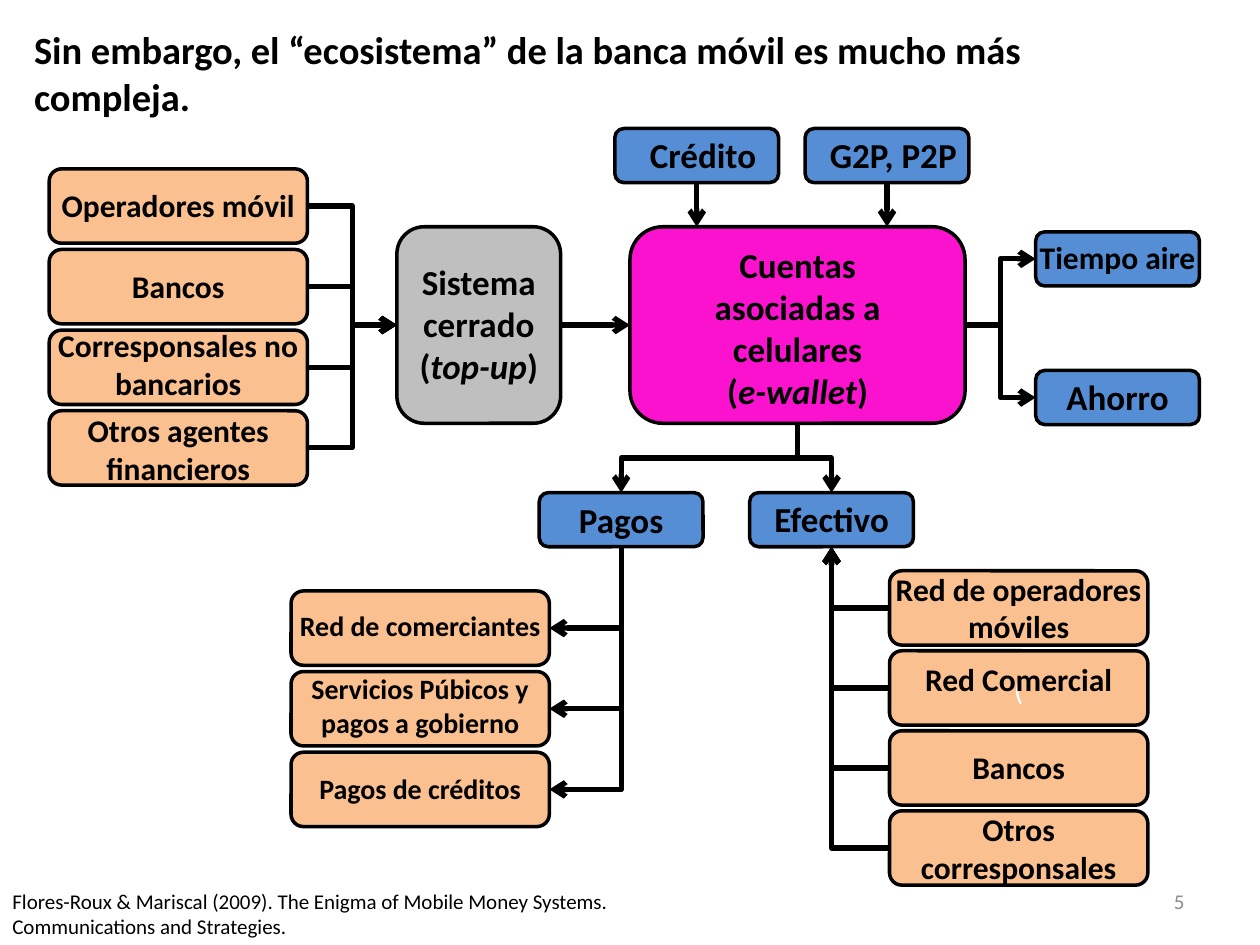
"""Build the mobile banking ecosystem slide."""
from dataclasses import dataclass

from lxml.etree import SubElement
from pptx import Presentation
from pptx.dml.color import RGBColor as Color
from pptx.enum.shapes import MSO_CONNECTOR as Connector, MSO_SHAPE as Shape
from pptx.enum.text import MSO_ANCHOR as Anchor, PP_ALIGN as Align
from pptx.oxml.ns import qn
from pptx.util import Inches, Pt


@dataclass(frozen=True)
class Theme:
    """Hold the colours, font and sizes of the slide."""
    font: str = "Calibri"
    ink: str = "000000"
    white: str = "FFFFFF"
    muted: str = "8C8C8C"
    orange: str = "FAC090"
    blue: str = "558ED5"
    grey: str = "BFBFBF"
    pink: str = "FA12CE"
    title: int = 22
    large: int = 20
    medium: int = 18
    small: int = 16
    note: int = 12
    outline: int = 2
    link: int = 3


THEME = Theme()
AGENT, SERVICE = (2.05, 0.59), (1.3, 0.43)
AGENT_LABEL, SERVICE_LABEL = 2.03, 1.64
PITCH = 0.64

TITLE = "Sin embargo, el “ecosistema” de la banca móvil es mucho más compleja."
SOURCE = ("Flores-Roux & Mariscal (2009). The Enigma of Mobile Money Systems. "
          "Communications and Strategies.")

# fmt: off
STACKS = {
    "funding": (0.39, 1.34, PITCH, THEME.medium, [
        ("Operadores móvil", 1.48), ("Bancos", 2.12),
        ("Corresponsales no bancarios", 2.59), ("Otros agentes financieros", 3.26)]),
    "payments": (2.31, 4.69, PITCH, THEME.small, [
        ("Red de comerciantes", 4.83), ("Servicios Púbicos y pagos a gobierno", 5.33),
        ("Pagos de créditos", 6.12)]),
    "cash": (7.06, 4.53, 0.635, THEME.medium, [
        ("Red de operadores móviles", 4.52), ("Red Comercial", 5.24),
        ("Bancos", 5.94), ("Otros\ncorresponsales", 6.43)]),
}
SERVICES = {
    "credit": ("Crédito", 4.88, 1.02, 1.06, THEME.large, 0.05),
    "transfers": ("G2P, P2P", 6.39, 1.02, 1.06, THEME.large, 0.05),
    "airtime": ("Tiempo aire", 8.22, 1.84, 1.89, THEME.medium, 0),
    "savings": ("Ahorro", 8.22, 2.94, 2.98, THEME.large, 0),
    "payments": ("Pagos", 4.28, 3.91, 3.96, THEME.large, 0),
    "cash": ("Efectivo", 5.95, 3.91, 3.95, THEME.large, 0),
}
HUBS = {
    "system": ("Sistema cerrado\n(*top-up*)", (3.15, 1.8, 1.3, 1.56), THEME.grey, 1.17, 2.07),
    "wallet": ("Cuentas asociadas a celulares\n(*e-wallet*)", (5, 1.8, 2.66, 1.56),
               THEME.pink, 1.88, 1.93),
}
# fmt: on


def write(frame, text, size=THEME.medium, color=THEME.ink, bold=False,
          align=Align.LEFT, anchor=Anchor.TOP, inset=None):
    """Fill a text frame, with asterisks around italic words."""
    frame.word_wrap = True
    frame.vertical_anchor = anchor
    if inset is not None:
        frame.margin_left = frame.margin_right = Inches(inset)
        frame.margin_top = frame.margin_bottom = Inches(inset)
    for index, line in enumerate(text.split("\n")):
        paragraph = frame.paragraphs[0] if index == 0 else frame.add_paragraph()
        paragraph.alignment = align
        for position, part in enumerate(line.split("*")):
            run = paragraph.add_run()
            run.text = part
            run.font.name = THEME.font
            run.font.size = Pt(size)
            run.font.bold = bold
            run.font.italic = position % 2 == 1
            run.font.color.rgb = Color.from_string(color)


def add_text(slide, text, area, **style):
    """Add a text box."""
    box = slide.shapes.add_textbox(*map(Inches, area))
    write(box.text_frame, text, **style)


def add_box(slide, area, fill):
    """Add an outlined rounded box."""
    shape = slide.shapes.add_shape(Shape.ROUNDED_RECTANGLE, *map(Inches, area))
    shape.shadow.inherit = False
    shape.fill.solid()
    shape.fill.fore_color.rgb = Color.from_string(fill)
    shape.line.color.rgb = Color.from_string(THEME.ink)
    shape.line.width = Pt(THEME.outline)
    return shape


def add_node(slide, text, area, fill, label_width, label_top, size, shift=0):
    """Add a box with its centred label."""
    left, top, width, height = area
    shape = add_box(slide, area, fill)
    label_left = left + (width - label_width) / 2 + shift
    label_height = 2 * (top + height / 2 - label_top)
    add_text(slide, text, (label_left, label_top, label_width, label_height),
             size=size, bold=True, align=Align.CENTER, inset=0)
    return shape


def side(area, name):
    """Return the middle point of one side of an area."""
    left, top, width, height = area
    return {"left": (left, top + height / 2), "right": (left + width, top + height / 2),
            "top": (left + width / 2, top), "bottom": (left + width / 2, top + height)}[name]


def add_arrow(slide, start, end, kind=Connector.ELBOW, downward=False, corner=False):
    """Join two points with an arrow, turned a quarter when it leaves downward."""
    (x1, y1), (x2, y2) = start, end
    if downward:
        middle_x, middle_y = (x1 + x2) / 2, (y1 + y2) / 2
        half_x, half_y = (x2 - x1) / 2, (y2 - y1) / 2
        x1, y1 = middle_x - half_y, middle_y + half_x
        x2, y2 = middle_x + half_y, middle_y - half_x
    arrow = slide.shapes.add_connector(kind, *map(Inches, (x1, y1, x2, y2)))
    arrow.line.color.rgb = Color.from_string(THEME.ink)
    arrow.line.width = Pt(THEME.link)
    properties = arrow.element.spPr
    if downward:
        properties.find(qn("a:xfrm")).set("rot", "5400000")
    if corner:
        properties.find(qn("a:prstGeom")).set("prst", "bentConnector2")
    SubElement(properties.find(qn("a:ln")), qn("a:tailEnd"), type="arrow")
    SubElement(properties, qn("a:effectLst"))


def main():
    """Compose and save the slide."""
    presentation = Presentation()
    presentation.slide_width, presentation.slide_height = Inches(10), Inches(7.5)
    slide = presentation.slides.add_slide(presentation.slide_layouts[6])
    add_text(slide, TITLE, (0.27, 0.21, 8.95, 0.74), size=THEME.title, bold=True, inset=0)

    hubs, services, stacks = {}, {}, {}
    for name, (text, area, fill, label_width, label_top) in HUBS.items():
        hubs[name] = area
        add_node(slide, text, area, fill, label_width, label_top, THEME.large)
    for name, (text, left, top, label_top, size, shift) in SERVICES.items():
        services[name] = (left, top, *SERVICE)
        add_node(slide, text, services[name], THEME.blue, SERVICE_LABEL, label_top, size, shift)
    for name, (left, top, pitch, size, rows) in STACKS.items():
        stacks[name] = [(left, top + index * pitch, *AGENT) for index in range(len(rows))]
        for (text, label_top), area in zip(rows, stacks[name]):
            shape = add_node(slide, text, area, THEME.orange, AGENT_LABEL, label_top, size)
            if text == "Red Comercial":
                write(shape.text_frame, "(", color=THEME.white,
                      align=Align.CENTER, anchor=Anchor.MIDDLE)

    for area in stacks["funding"]:
        add_arrow(slide, side(area, "right"), side(hubs["system"], "left"))
    for area in stacks["payments"]:
        add_arrow(slide, side(services["payments"], "bottom"), side(area, "right"),
                  downward=True, corner=True)
    for area in stacks["cash"]:
        add_arrow(slide, side(area, "left"), side(services["cash"], "bottom"), corner=True)
    for name in ("payments", "cash"):
        add_arrow(slide, side(hubs["wallet"], "bottom"), side(services[name], "top"),
                  downward=True)
    for name in ("airtime", "savings"):
        add_arrow(slide, side(hubs["wallet"], "right"), side(services[name], "left"))
    for name in ("credit", "transfers"):
        x, y = side(services[name], "bottom")
        add_arrow(slide, (x, y), (x, hubs["wallet"][1]), kind=Connector.STRAIGHT)
    add_arrow(slide, side(hubs["system"], "right"), side(hubs["wallet"], "left"),
              kind=Connector.STRAIGHT)

    add_text(slide, SOURCE, (0, 7, 5, 0.5), size=THEME.note)
    add_text(slide, "5", (7.17, 6.95, 2.33, 0.4), size=THEME.note, color=THEME.muted,
             align=Align.RIGHT, anchor=Anchor.MIDDLE)
    presentation.save("out.pptx")


if __name__ == "__main__":
    main()
